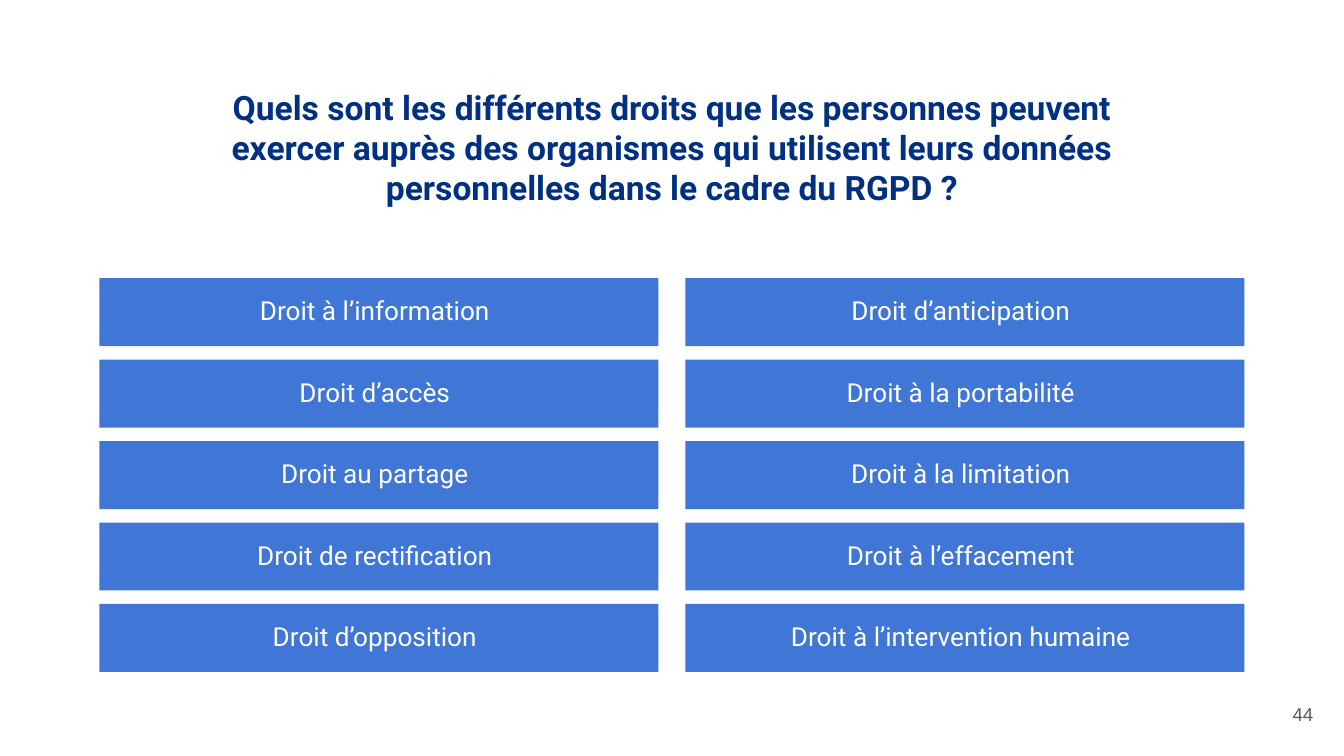
import pptx
import pptx.dml.color
import pptx.enum.shapes
import pptx.enum.text
import pptx.util

NAVY = pptx.dml.color.RGBColor(0x00, 0x30, 0x81)
BLUE = pptx.dml.color.RGBColor(0x40, 0x77, 0xD7)
WHITE = pptx.dml.color.RGBColor(0xFF, 0xFF, 0xFF)
GREY = pptx.dml.color.RGBColor(0x59, 0x59, 0x59)

SLIDE_WIDTH, SLIDE_HEIGHT = 10, 5.625
QUESTION = (
    "Quels sont les différents droits que les personnes peuvent exercer "
    "auprès des organismes qui utilisent leurs données personnelles "
    "dans le cadre du RGPD ?"
)
RIGHTS = [
    ("Droit à l’information", "Droit d’anticipation"),
    ("Droit d’accès", "Droit à la portabilité"),
    ("Droit au partage", "Droit à la limitation"),
    ("Droit de rectification", "Droit à l’effacement"),
    ("Droit d’opposition", "Droit à l’intervention humaine"),
]
COLUMN_GAP, ROW_GAP = 0.2, 0.1


def place(part, box):
    part.left, part.top, part.width, part.height = map(pptx.util.Inches, box)


def write(part, text, size, font_name, color, align, bold=False):
    frame = part.text_frame
    frame.text = text
    frame.word_wrap = True
    frame.auto_size = pptx.enum.text.MSO_AUTO_SIZE.NONE
    frame.vertical_anchor = pptx.enum.text.MSO_ANCHOR.MIDDLE
    frame.margin_left = frame.margin_right = pptx.util.Inches(0.1)
    frame.margin_top = frame.margin_bottom = pptx.util.Inches(0.1)
    paragraph = frame.paragraphs[0]
    paragraph.alignment = align
    paragraph.font.size = pptx.util.Pt(size)
    paragraph.font.name = font_name
    paragraph.font.bold = bold
    paragraph.font.color.rgb = color


def add_question(slide, box):
    question = slide.shapes.title
    place(question, box)
    write(question, QUESTION, 18, "Roboto", NAVY,
          pptx.enum.text.PP_ALIGN.CENTER, bold=True)


def add_panel(shapes, box):
    panel = shapes.add_shape(
        pptx.enum.shapes.MSO_SHAPE.RECTANGLE, *map(pptx.util.Inches, box))
    panel.shadow.inherit = False
    panel.fill.solid()
    panel.fill.fore_color.rgb = BLUE
    panel.line.fill.background()
    return panel


def add_right(slide, box, text):
    left, top, width, height = box
    button = slide.shapes.add_group_shape()
    add_panel(button.shapes, box)
    label = add_panel(button.shapes, (
        left + 0.05 * width, top + 0.09 * height,
        0.885 * width, 0.77 * height))
    write(label, text, 14, "Roboto", WHITE, pptx.enum.text.PP_ALIGN.CENTER)


def add_rights(slide, box):
    left, top, width, height = box
    column_width = (width + COLUMN_GAP) / len(RIGHTS[0]) - COLUMN_GAP
    row_height = (height + ROW_GAP) / len(RIGHTS) - ROW_GAP
    for row, texts in enumerate(RIGHTS):
        for column, text in enumerate(texts):
            add_right(slide, (
                left + column * (column_width + COLUMN_GAP),
                top + row * (row_height + ROW_GAP),
                column_width, row_height), text)


def add_page_number(slide, box):
    number = slide.shapes.add_textbox(*map(pptx.util.Inches, box))
    write(number, "44", 10, "Arial", GREY, pptx.enum.text.PP_ALIGN.RIGHT)


def main():
    deck = pptx.Presentation()
    deck.slide_width = pptx.util.Inches(SLIDE_WIDTH)
    deck.slide_height = pptx.util.Inches(SLIDE_HEIGHT)
    slide = deck.slides.add_slide(deck.slide_layouts[5])
    add_question(slide, (1.55, 0.28, 6.9, 1.63))
    add_rights(slide, (0.74, 2.07, 8.52, 2.93))
    add_page_number(slide, (9.27, 5.1, 0.6, 0.43))
    deck.save("out.pptx")


if __name__ == "__main__":
    main()
